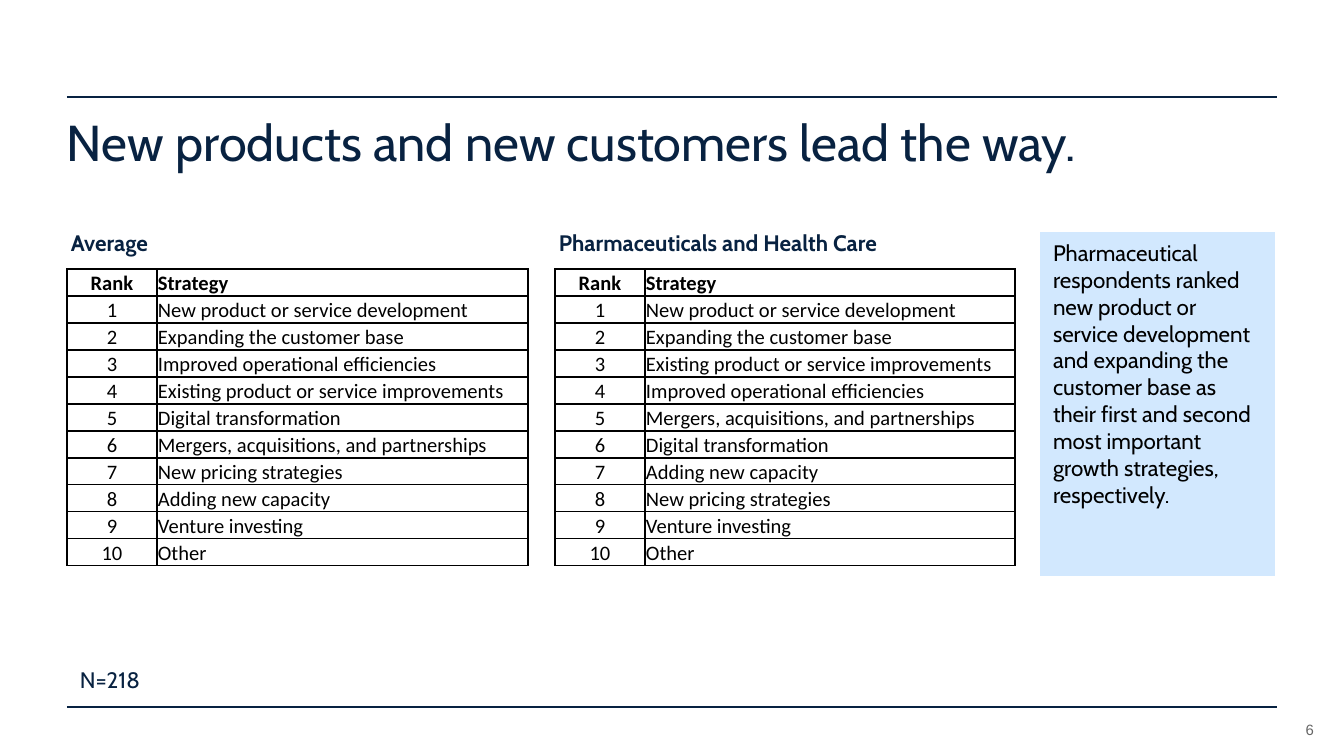
from dataclasses import dataclass

from lxml import etree
from pptx import Presentation
from pptx.dml.color import RGBColor
from pptx.enum.shapes import MSO_CONNECTOR, MSO_SHAPE
from pptx.enum.text import MSO_ANCHOR, MSO_AUTO_SIZE, PP_ALIGN
from pptx.oxml.ns import qn
from pptx.util import Emu, Pt

STRAIGHT, RECTANGLE = MSO_CONNECTOR.STRAIGHT, MSO_SHAPE.RECTANGLE
TOP, BOTTOM = MSO_ANCHOR.TOP, MSO_ANCHOR.BOTTOM
LEFT, CENTER, RIGHT = PP_ALIGN.LEFT, PP_ALIGN.CENTER, PP_ALIGN.RIGHT
NO_AUTOFIT = MSO_AUTO_SIZE.NONE

NAVY, BLACK, GRAY, PALE_BLUE = "082241", "000000", "666666", "D2E8FE"
TITLE_ONLY = 5
ROW_HEIGHT, RANK_WIDTH = 27, 90
TABLE_TOP, LABEL_TOP = 269, 222
RULE_WIDTH = Pt(0.75)


@dataclass
class Style:
    size: int
    font: str = "Cabin"
    color: str = NAVY
    bold: bool = False
    align: PP_ALIGN = LEFT


@dataclass
class Box:
    left: int
    top: int
    width: int
    height: int


@dataclass
class Ranking:
    heading: str
    left: int
    strategy_width: int
    label_width: int
    strategies: list[str]


RANKINGS = [
    Ranking("Average", 67, 371, 298, [
        "New product or service development",
        "Expanding the customer base",
        "Improved operational efficiencies",
        "Existing product or service improvements",
        "Digital transformation",
        "Mergers, acquisitions, and partnerships",
        "New pricing strategies",
        "Adding new capacity",
        "Venture investing",
        "Other",
    ]),
    Ranking("Pharmaceuticals and Health Care", 555, 370, 423, [
        "New product or service development",
        "Expanding the customer base",
        "Existing product or service improvements",
        "Improved operational efficiencies",
        "Mergers, acquisitions, and partnerships",
        "Digital transformation",
        "Adding new capacity",
        "New pricing strategies",
        "Venture investing",
        "Other",
    ]),
]


def px(length: int) -> Emu:
    return Emu(round(length * 914400 / 134.4))


def rgb(color: str) -> RGBColor:
    return RGBColor.from_string(color)


def place(box: Box) -> tuple[Emu, Emu, Emu, Emu]:
    return px(box.left), px(box.top), px(box.width), px(box.height)


def set_all(target, values: dict) -> None:
    for attribute, value in values.items():
        setattr(target, attribute, value)


def write(frame, text: str, style: Style) -> None:
    paragraph = frame.paragraphs[0]
    paragraph.alignment = style.align
    run = paragraph.add_run()
    run.text = text
    set_all(run.font, {"size": Pt(style.size), "name": style.font, "bold": style.bold})
    run.font.color.rgb = rgb(style.color)


def set_frame(frame, across: int = 13, down: int = 7, anchor: MSO_ANCHOR = TOP) -> None:
    set_all(frame, {
        "word_wrap": True, "auto_size": NO_AUTOFIT, "vertical_anchor": anchor,
        "margin_left": px(across), "margin_right": px(across),
        "margin_top": px(down), "margin_bottom": px(down),
    })


def add_label(slide, box: Box, text: str, style: Style) -> None:
    frame = slide.shapes.add_textbox(*place(box)).text_frame
    set_frame(frame)
    write(frame, text, style)


def add_rule(slide, y: int) -> None:
    rule = slide.shapes.add_connector(STRAIGHT, px(67), px(y), px(1277), px(y))
    rule.line.color.rgb = rgb(NAVY)
    rule.line.width = RULE_WIDTH
    etree.SubElement(rule._element.spPr, qn("a:effectLst"))


def add_borders(cell) -> None:
    properties = cell._tc.get_or_add_tcPr()
    for side in ("lnL", "lnR", "lnT", "lnB"):
        border = etree.SubElement(properties, qn(f"a:{side}"), w=str(RULE_WIDTH))
        fill = etree.SubElement(border, qn("a:solidFill"))
        etree.SubElement(fill, qn("a:srgbClr"), val=BLACK)


def add_ranking(slide, ranking: Ranking) -> None:
    rows = [("Rank", "Strategy")]
    rows += [(str(rank), name) for rank, name in enumerate(ranking.strategies, 1)]
    box = Box(ranking.left, TABLE_TOP, RANK_WIDTH + ranking.strategy_width,
              ROW_HEIGHT * len(rows))
    table = slide.shapes.add_table(len(rows), 2, *place(box)).table
    set_all(table, {"first_row": False, "horz_banding": False})
    for column, width in zip(table.columns, (RANK_WIDTH, ranking.strategy_width)):
        column.width = px(width)

    for row_index, row in enumerate(rows):
        table.rows[row_index].height = px(ROW_HEIGHT)
        for column_index, text in enumerate(row):
            cell = table.cell(row_index, column_index)
            set_all(cell, {
                "vertical_anchor": BOTTOM, "margin_left": px(1), "margin_right": px(1),
                "margin_top": px(1), "margin_bottom": 0,
            })
            add_borders(cell)
            cell.fill.background()
            align = LEFT if column_index else CENTER
            write(cell.text_frame, text,
                  Style(11, "Calibri", BLACK, bold=row_index == 0, align=align))

    label = Box(ranking.left - 9, LABEL_TOP, ranking.label_width, 40)
    add_label(slide, label, ranking.heading, Style(12, bold=True))


def main() -> None:
    deck = Presentation()
    set_all(deck, {"slide_width": px(1344), "slide_height": px(756)})
    slide = deck.slides.add_slide(deck.slide_layouts[TITLE_ONLY])

    # Rules above and below the content
    for y in (97, 707):
        add_rule(slide, y)

    # Title
    title = slide.shapes.title
    title.left, title.top, title.width, title.height = place(Box(67, 118, 1210, 74))
    set_frame(title.text_frame, 0, 0)
    write(title.text_frame, "New products and new customers lead the way.", Style(27))
    title.text_frame.paragraphs[0].line_spacing = 0.9

    # Takeaway panel
    takeaway = slide.shapes.add_shape(RECTANGLE, *place(Box(1040, 232, 235, 344)))
    takeaway.shadow.inherit = False
    takeaway.fill.solid()
    takeaway.fill.fore_color.rgb = rgb(PALE_BLUE)
    takeaway.line.fill.background()
    set_frame(takeaway.text_frame)
    write(takeaway.text_frame,
          "Pharmaceutical respondents ranked new product or service development and "
          "expanding the customer base as their first and second most important "
          "growth strategies, respectively.", Style(12, color=BLACK))

    # Ranked strategy tables with headings
    for ranking in RANKINGS:
        add_ranking(slide, ranking)

    # Sample size and page number
    add_label(slide, Box(67, 659, 222, 40), "N=218", Style(12))
    page_number = slide.shapes.add_textbox(*place(Box(1251, 715, 63, 24))).text_frame
    set_frame(page_number, 0, 0, BOTTOM)
    write(page_number, "6", Style(8, "Arial", GRAY, align=RIGHT))

    deck.save("out.pptx")


if __name__ == "__main__":
    main()
